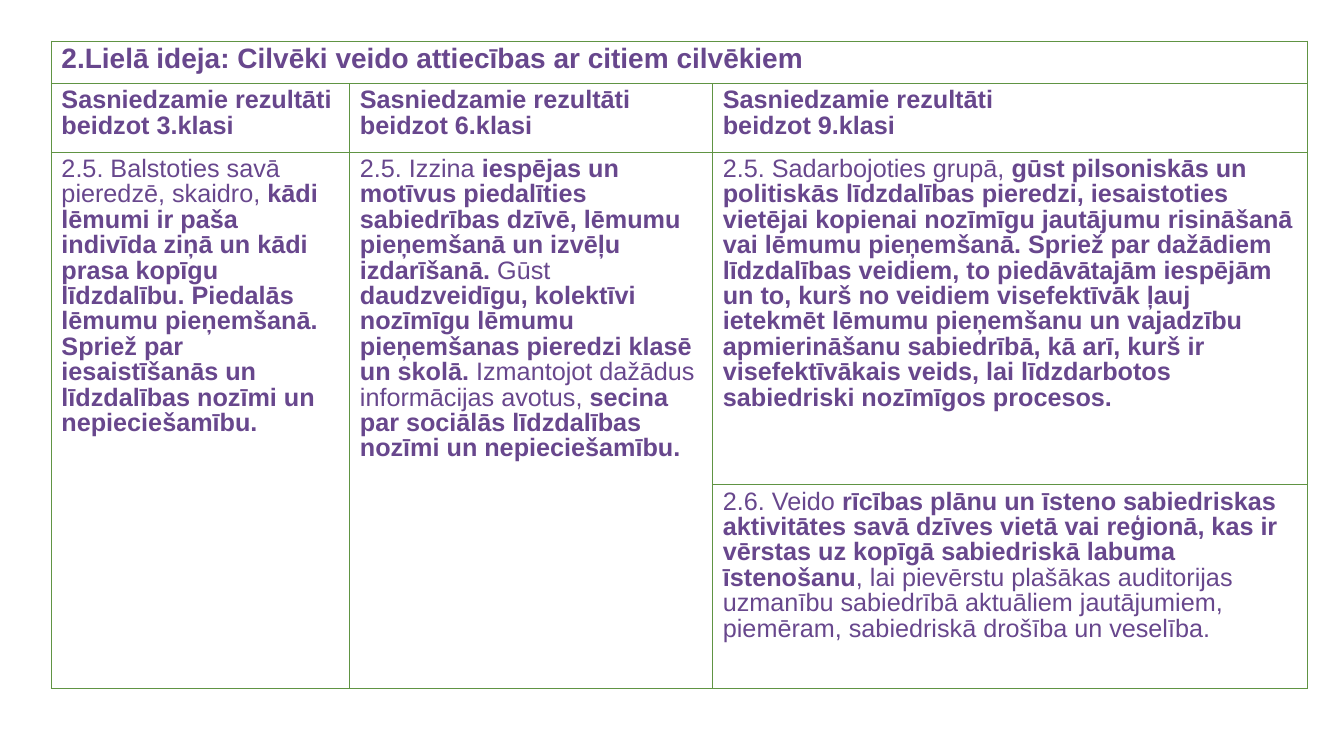
from dataclasses import dataclass

from lxml import etree
from pptx import Presentation, util as u
from pptx.dml.color import RGBColor
from pptx.oxml import ns


@dataclass(frozen=True)
class Theme:
    font: str = "Arial"
    ink: str = "68478D"
    rule: str = "609443"
    idea_size: int = 20
    body_size: int = 18
    leading: float = 0.9


class SlideBuilder:
    """Draws styled elements on one slide, with lengths in px at 100 px to the inch."""

    SCALE = 9144

    def __init__(self, deck, theme):
        self.theme = theme
        self.slide = deck.slides.add_slide(deck.slide_layouts[6])

    def px(self, length):
        return u.Emu(length * self.SCALE)

    def grid(self, left, top, widths, heights):
        frame = self.slide.shapes.add_table(
            len(heights), len(widths), self.px(left), self.px(top),
            self.px(sum(widths)), self.px(sum(heights)))
        table = frame.table
        table.first_row = table.horz_banding = False
        for column, width in zip(table.columns, widths):
            column.width = self.px(width)
        for row, height in zip(table.rows, heights):
            row.height = self.px(height)
        for cell in table.iter_cells():
            self.borders(cell)
            cell.fill.background()
        return table

    def borders(self, cell):
        properties = cell._tc.get_or_add_tcPr()
        for side in ("lnL", "lnR", "lnT", "lnB"):
            line = etree.SubElement(properties, ns.qn(f"a:{side}"), w=str(u.Pt(1)))
            fill = etree.SubElement(line, ns.qn("a:solidFill"))
            etree.SubElement(fill, ns.qn("a:srgbClr"), val=self.theme.rule)

    def fill_cell(self, cell, paragraphs, size):
        frame = cell.text_frame
        for index, runs in enumerate(paragraphs):
            paragraph = frame.paragraphs[0] if index == 0 else frame.add_paragraph()
            paragraph.line_spacing = self.theme.leading
            paragraph.font.name = self.theme.font
            paragraph.font.size = u.Pt(size)
            paragraph.font.color.rgb = RGBColor.from_string(self.theme.ink)
            for wording, bold in runs:
                run = paragraph.add_run()
                run.text = wording
                run.font.bold = bold


BIG_IDEA = "2.Lielā ideja: Cilvēki veido attiecības ar citiem cilvēkiem"
GRADES = (3, 6, 9)
OUTCOMES = {
    (2, 0): [
        ("2.5. Balstoties savā pieredzē, skaidro, ", False),
        ("kādi lēmumi ir paša indivīda ziņā un kādi prasa kopīgu līdzdalību. "
         "Piedalās lēmumu pieņemšanā. Spriež par iesaistīšanās un līdzdalības "
         "nozīmi un nepieciešamību.", True),
    ],
    (2, 1): [
        ("2.5. Izzina ", False),
        ("iespējas un motīvus piedalīties sabiedrības dzīvē, lēmumu pieņemšanā "
         "un izvēļu izdarīšanā. ", True),
        ("Gūst ", False),
        ("daudzveidīgu, kolektīvi nozīmīgu lēmumu pieņemšanas pieredzi klasē "
         "un skolā. ", True),
        ("Izmantojot dažādus informācijas avotus, ", False),
        ("secina par sociālās līdzdalības nozīmi un nepieciešamību.", True),
    ],
    (2, 2): [
        ("2.5. Sadarbojoties grupā, ", False),
        ("gūst pilsoniskās un politiskās līdzdalības pieredzi, iesaistoties "
         "vietējai kopienai nozīmīgu jautājumu risināšanā vai lēmumu pieņemšanā. "
         "Spriež par dažādiem līdzdalības veidiem, to piedāvātajām iespējām un to, "
         "kurš no veidiem visefektīvāk ļauj ietekmēt lēmumu pieņemšanu un vajadzību "
         "apmierināšanu sabiedrībā, kā arī, kurš ir visefektīvākais veids, lai "
         "līdzdarbotos sabiedriski nozīmīgos procesos.", True),
    ],
    (3, 2): [
        ("2.6. Veido ", False),
        ("rīcības plānu un īsteno sabiedriskas aktivitātes savā dzīves vietā vai "
         "reģionā, kas ir vērstas uz kopīgā sabiedriskā labuma īstenošanu", True),
        (", lai pievērstu plašākas auditorijas uzmanību sabiedrībā aktuāliem "
         "jautājumiem, piemēram, sabiedriskā drošība un veselība.", False),
    ],
}


def main():
    deck = Presentation()
    theme = Theme()
    deck.slide_width, deck.slide_height = u.Inches(13.33), u.Inches(7.5)
    builder = SlideBuilder(deck, theme)

    outcomes = builder.grid(51, 41, (296, 360, 590), (42, 68, 330, 202))
    outcomes.cell(0, 0).merge(outcomes.cell(0, 2))
    for column in (0, 1):
        outcomes.cell(2, column).merge(outcomes.cell(3, column))

    builder.fill_cell(outcomes.cell(0, 0), [[(BIG_IDEA, True)]], theme.idea_size)
    for column, grade in enumerate(GRADES):
        heading = [[("Sasniedzamie rezultāti", True)], [(f"beidzot {grade}.klasi", True)]]
        builder.fill_cell(outcomes.cell(1, column), heading, theme.body_size)
    for (row, column), runs in OUTCOMES.items():
        builder.fill_cell(outcomes.cell(row, column), [runs], theme.body_size)

    deck.save("out.pptx")


if __name__ == "__main__":
    main()
